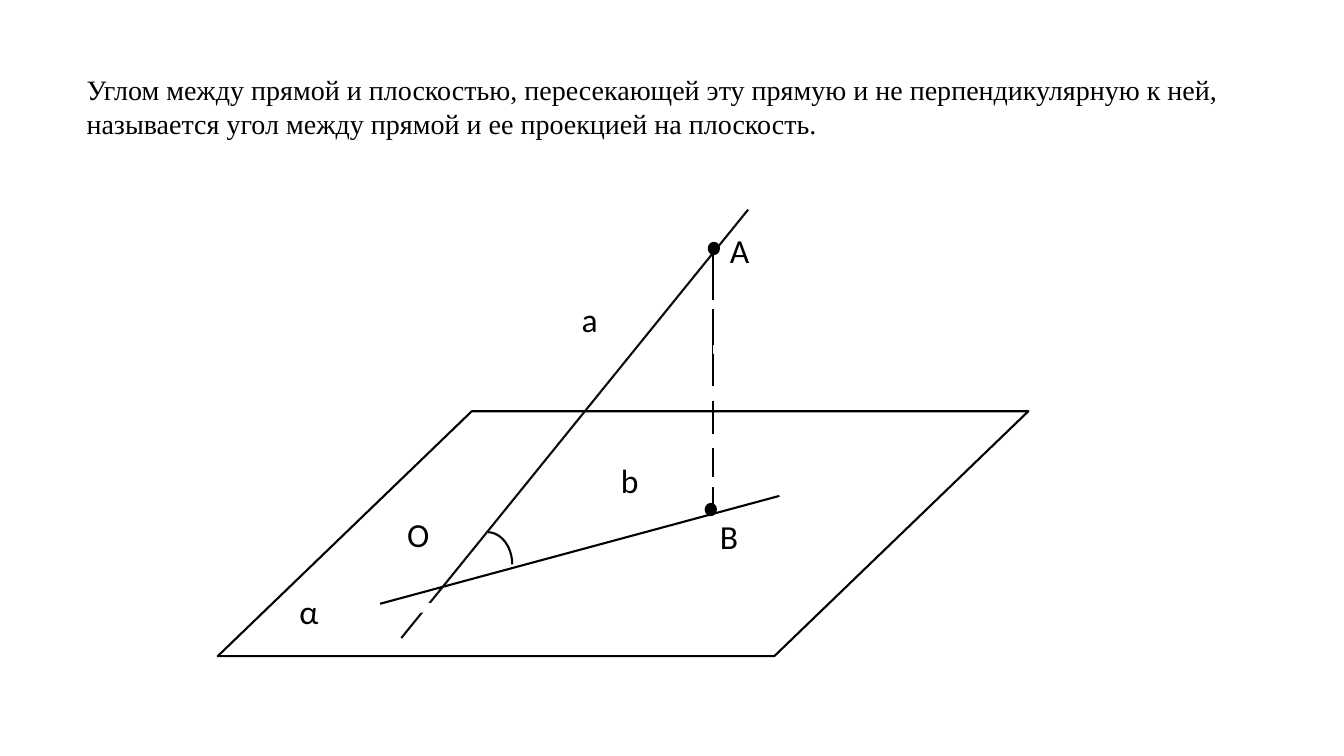
from dataclasses import dataclass

from lxml import etree
from pptx import Presentation
from pptx import util as u
from pptx.dml.color import RGBColor
from pptx.enum import shapes, text
from pptx.oxml import ns


@dataclass(frozen=True)
class Theme:
    ink: str = "000000"
    soft_ink: str = "0D0D0D"
    paper: str = "FFFFFF"
    body_font: str = "Times New Roman"
    label_font: str = "Calibri"
    body_size: float = 20
    label_size: float = 24
    thin: float = 1
    normal: float = 1.5
    thick: float = 3


THEME = Theme()
SHAPE = shapes.MSO_SHAPE


def add_figure(parent, kind, box, fill, line, width):
    figure = parent.add_shape(kind, *map(u.Inches, box))
    figure.shadow.inherit = False
    figure.fill.solid()
    figure.fill.fore_color.rgb = RGBColor.from_string(fill)
    figure.line.color.rgb = RGBColor.from_string(line)
    figure.line.width = u.Pt(width)
    return figure


def add_line(parent, start, end, colour, width):
    line = parent.add_connector(
        shapes.MSO_CONNECTOR.STRAIGHT, *map(u.Inches, start + end))
    line.line.color.rgb = RGBColor.from_string(colour)
    line.line.width = u.Pt(width)
    etree.SubElement(line._element.spPr, ns.qn("a:effectLst"))


def add_text(parent, box, wording, font, size):
    frame = parent.add_textbox(*map(u.Inches, box)).text_frame
    frame.word_wrap = True
    frame.auto_size = text.MSO_AUTO_SIZE.SHAPE_TO_FIT_TEXT
    frame.text = wording
    span = frame.paragraphs[0].runs[0]
    span.font.name = font
    span.font.size = u.Pt(size)
    span.font.color.rgb = RGBColor.from_string(THEME.ink)


def add_definition(page, box):
    add_text(
        page.shapes, box,
        "Углом между прямой и плоскостью, пересекающей эту прямую и не "
        "перпендикулярную к ней, называется угол между прямой и ее "
        "проекцией на плоскость.",
        THEME.body_font, THEME.body_size)


def add_drawing(page, box):
    left, top, width, height = box
    parts = page.shapes.add_group_shape().shapes

    def place(x, y, *size):
        return (left + x, top + y) + size

    # Plane α
    plane_top = 2
    plane = add_figure(
        parts, SHAPE.PARALLELOGRAM,
        place(0, plane_top, width, height - plane_top),
        THEME.paper, THEME.ink, THEME.normal)
    plane.adjustments[0] = 1.037

    # Line a, its projection b and the perpendicular AB
    for start, end, colour, weight in (
        ((5.26, 0), (1.82, 4.25), THEME.soft_ink, THEME.normal),
        ((1.61, 3.91), (5.57, 2.84), THEME.ink, THEME.normal),
        ((4.91, 0.44), (4.91, 2.95), THEME.ink, THEME.thin),
    ):
        add_line(parts, place(*start), place(*end), colour, weight)

    # Gaps that break the lines into dashes
    for kind, *gap in (
        (SHAPE.RECTANGLE, 4.84, 0.9, 0.22, 0.08),
        (SHAPE.RECTANGLE, 4.92, 1.35, 0.18, 0.08),
        (SHAPE.RECTANGLE, 4.82, 1.76, 0.22, 0.13),
        (SHAPE.RECTANGLE, 4.82, 2.23, 0.22, 0.13),
        (SHAPE.RECTANGLE, 4.86, 2.66, 0.16, 0.08),
        (SHAPE.PARALLELOGRAM, 1.92, 3.91, 0.47, 0.08),
    ):
        add_figure(parts, kind, place(*gap),
                   THEME.paper, THEME.paper, THEME.thin)

    # Angle mark: a quarter turn
    angle = add_figure(parts, SHAPE.ARC, place(2.43, 3.2, 0.49, 0.64),
                       THEME.paper, THEME.ink, THEME.normal)
    angle.adjustments[0] = 162
    angle.adjustments[1] = 0

    # Letters
    for letter, *spot in (
        ("α", 0.71, 3.73, 0.49, 0.5),
        ("А", 4.98, 0.15, 0.59, 0.81),
        ("В", 4.88, 2.99, 0.55, 0.81),
        ("a", 3.51, 0.84, 0.51, 0.81),
        ("b", 3.9, 2.43, 0.41, 0.81),
        ("O", 1.78, 2.97, 0.45, 0.81),
    ):
        add_text(parts, place(*spot), letter,
                 THEME.label_font, THEME.label_size)

    # Points B and A
    for x, y in ((4.85, 2.93), (4.88, 0.34)):
        add_figure(parts, SHAPE.OVAL, place(x, y, 0.08, 0.09),
                   THEME.ink, THEME.ink, THEME.thick)


def main():
    deck = Presentation()
    deck.slide_width = u.Inches(13.33)
    deck.slide_height = u.Inches(7.5)
    page = deck.slides.add_slide(deck.slide_layouts[6])
    add_definition(page, (0.76, 0.67, 11.91, 1.08))
    add_drawing(page, (2.16, 2.08, 8.04, 4.43))
    deck.save("out.pptx")


if __name__ == "__main__":
    main()
